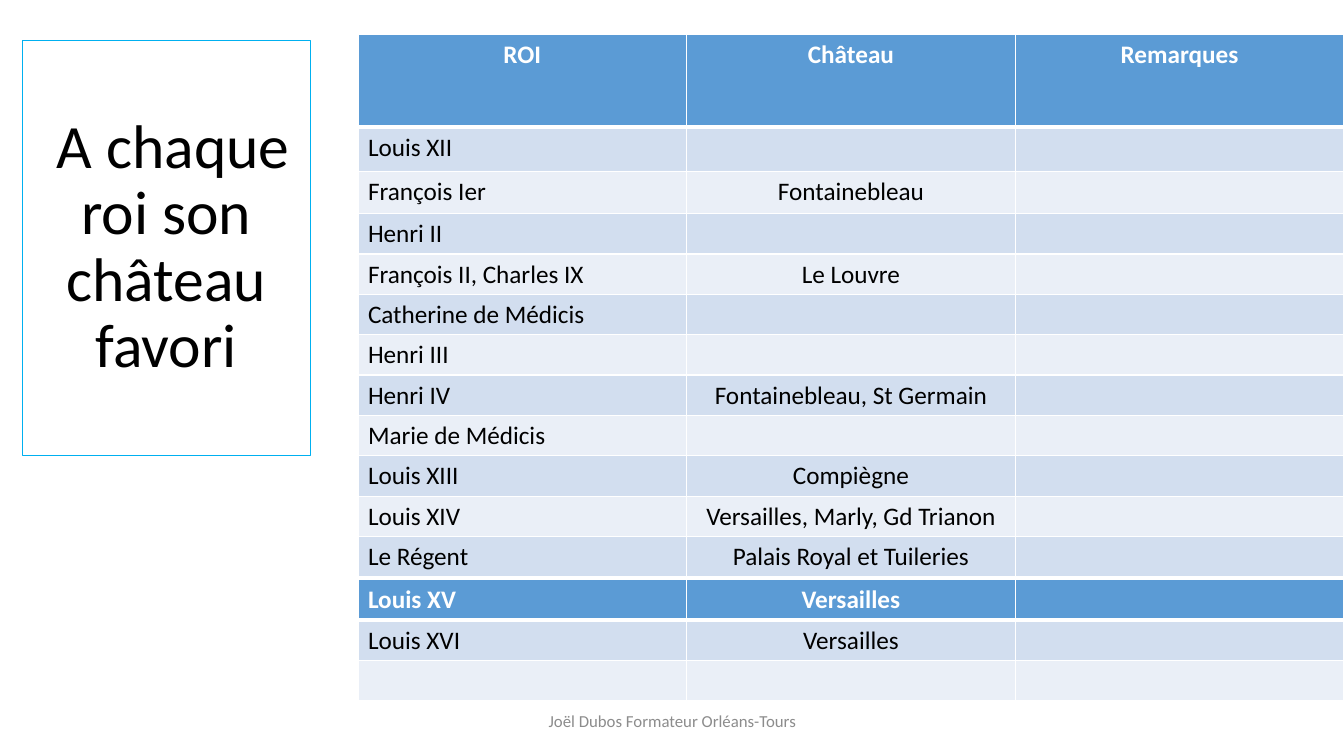
"""Build the slide that pairs each French king with his favourite château."""
from lxml import etree
from pptx import Presentation
from pptx.dml.color import RGBColor
from pptx.enum.text import MSO_ANCHOR, PP_ALIGN
from pptx.oxml.ns import qn
from pptx.util import Inches, Pt

LEFT, CENTER = PP_ALIGN.LEFT, PP_ALIGN.CENTER
MIDDLE = MSO_ANCHOR.MIDDLE
COLORS = {
    "frame": "00B0F0", "head": "5B9BD5", "dark": "D2DEEF", "light": "EAEFF7",
    "white": "FFFFFF", "black": "000000", "grey": "8C8C8C",
}


def style(par, size, color, align, bold=False):
    """Format the font and alignment of one paragraph."""
    par.alignment = align
    form = {"name": "Calibri", "size": Pt(size), "bold": bold}
    for key, value in form.items():
        setattr(par.font, key, value)
    par.font.color.rgb = RGBColor.from_string(COLORS[color])


def border(cell, widths):
    """Draw the white left, right, top and bottom edges of a cell."""
    props = cell._tc.get_or_add_tcPr()
    for spot, (side, width) in enumerate(zip("LRTB", widths)):
        line = etree.Element(qn(f"a:ln{side}"), w=str(Pt(width)))
        fill = etree.SubElement(line, qn("a:solidFill"))
        etree.SubElement(fill, qn("a:srgbClr"), val=COLORS["white"])
        props.insert(spot, line)


prs = Presentation()
prs.slide_width, prs.slide_height = Inches(13.33), Inches(7.5)
slide = prs.slides.add_slide(prs.slide_layouts[6])

texts = [
    ((0.22, 0.4, 2.86, 4.12), " A chaque roi son château favori", 44, "black"),
    ((4.42, 6.95, 4.5, 0.4), "Joël Dubos Formateur Orléans-Tours", 12, "grey"),
]
boxes = []
for place, text, size, color in texts:
    box = slide.shapes.add_textbox(*map(Inches, place))
    frame = box.text_frame
    frame.word_wrap = True
    frame.vertical_anchor = MIDDLE
    frame.text = text
    style(frame.paragraphs[0], size, color, CENTER)
    boxes.append(box)
title = boxes[0]
title.line.color.rgb = RGBColor.from_string(COLORS["frame"])
title.line.width = Pt(0.75)
title.text_frame.paragraphs[0].line_spacing = 0.9

early = [
    ("ROI", "Château", "Remarques"),
    ("Louis XII", "", ""),
    ("François Ier", "Fontainebleau", ""),
    ("Henri II", "", ""),
    ("François II, Charles IX", "Le Louvre", ""),
    ("Catherine de Médicis", "", ""),
    ("Henri III", "", ""),
    ("Henri IV", "Fontainebleau, St Germain", ""),
    ("Marie de Médicis", "", ""),
    ("Louis XIII", "Compiègne", ""),
    ("Louis XIV", "Versailles, Marly, Gd Trianon", ""),
    ("Le Régent", "Palais Royal et Tuileries", ""),
]
late = [
    ("Louis XV", "Versailles", ""),
    ("Louis XVI", "Versailles", ""),
    ("", "", ""),
]
tables = [
    (0.34, early, [0.92, 0.44, 0.42] + [0.4] * 9),
    (5.75, late, [0.4] * 3),
]
for top, rows, heights in tables:
    shape = slide.shapes.add_table(
        len(rows), 3, Inches(3.55), Inches(top), Inches(9.78), Inches(sum(heights)))
    table = shape.table
    for column in table.columns:
        column.width = Inches(3.26)
    for r, (row, height) in enumerate(zip(rows, heights)):
        table.rows[r].height = Inches(height)
        head = r == 0
        shade = "head" if head else "dark" if r % 2 else "light"
        edges = (1, 1, 3 if r == 1 else 1, 3 if head else 1)
        for c, text in enumerate(row):
            cell = table.cell(r, c)
            cell.text = text
            cell.fill.solid()
            cell.fill.fore_color.rgb = RGBColor.from_string(COLORS[shade])
            align = CENTER if c or text == "ROI" else LEFT
            style(cell.text_frame.paragraphs[0], 18,
                  "white" if head else "black", align, head)
            border(cell, edges)

prs.save("out.pptx")
